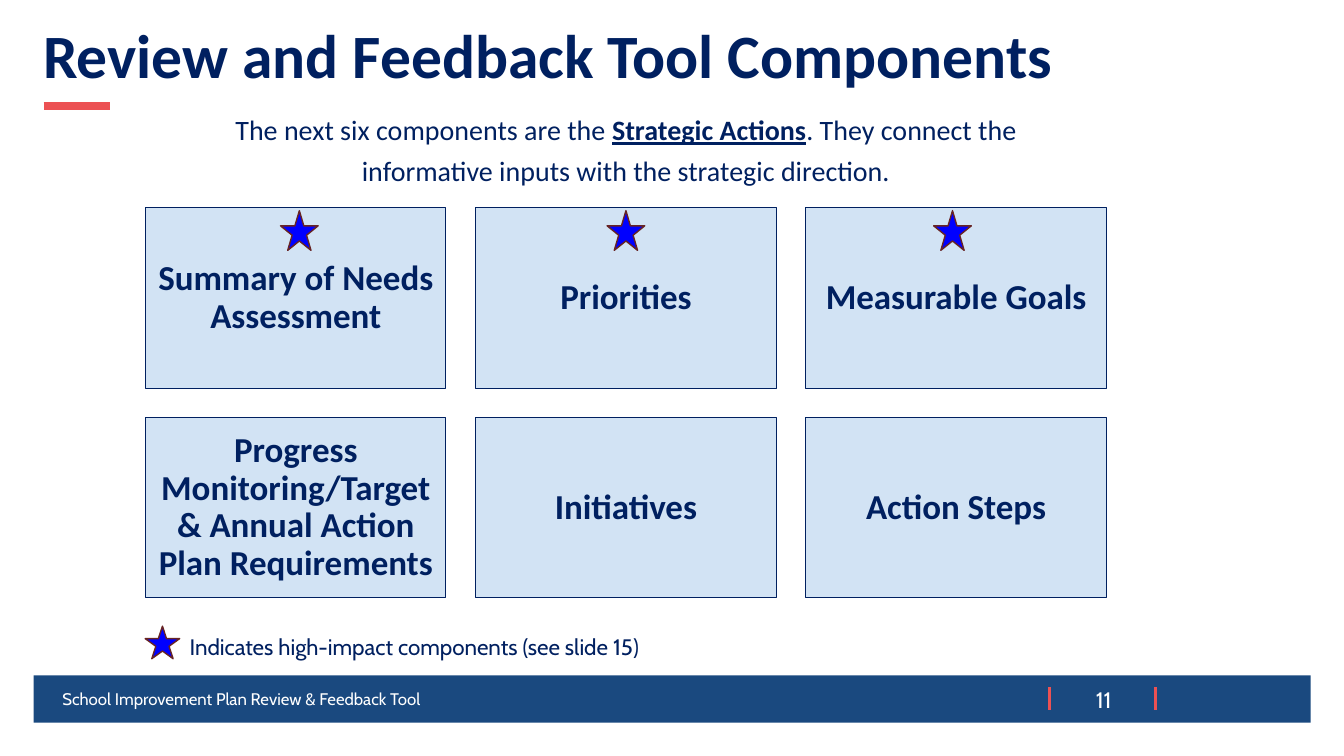
from dataclasses import dataclass

from lxml.etree import SubElement
from pptx import Presentation
from pptx.dml.color import RGBColor
from pptx.enum.shapes import MSO_CONNECTOR as Connector, MSO_SHAPE as Shape
from pptx.enum.text import MSO_ANCHOR as Anchor, PP_ALIGN as Align
from pptx.oxml.ns import qn
from pptx.util import Cm, Pt

COLORS = {
    "navy": "002060",
    "coral": "EC5153",
    "footer": "1A497F",
    "card": "D2E3F4",
    "star": "0000FF",
    "star_edge": "672424",
    "white": "FFFFFF",
}


@dataclass
class Area:
    """A rectangle in centimetres."""
    left: float
    top: float
    width: float
    height: float

    def lengths(self) -> list:
        return [Cm(n) for n in (self.left, self.top, self.width, self.height)]


@dataclass
class Style:
    font: str
    size: float
    color: str = "navy"
    bold: bool = False
    align: Align = Align.LEFT
    spacing: float = 1.0
    anchor: Anchor = Anchor.MIDDLE


@dataclass
class Span:
    text: str
    emphasis: bool = False


@dataclass
class Card:
    text: str
    high_impact: bool = False


@dataclass
class Rule:
    """A straight coral line, in centimetres, with its weight in points."""
    x1: float
    y1: float
    x2: float
    y2: float
    weight: float


TITLE = Style("Calibri", 44, bold=True, spacing=0.9)
INTRO = Style("Calibri", 20, align=Align.CENTER, spacing=1.23, anchor=Anchor.TOP)
CARD = Style("Calibri", 25, bold=True, align=Align.CENTER, spacing=0.9)
LEGEND = Style("Cabin", 16, spacing=1.23, anchor=Anchor.TOP)
FOOTER = Style("Cabin", 12, "white")
NUMBER = Style("Cabin", 16, "white", align=Align.CENTER)

CARDS = [
    Card("Summary of Needs Assessment", True),
    Card("Priorities", True),
    Card("Measurable Goals", True),
    Card("Progress Monitoring/Target & Annual Action Plan Requirements"),
    Card("Initiatives"),
    Card("Action Steps"),
]
COLUMNS = 3
CARD_PITCH_X, CARD_PITCH_Y = 8.32, 5.28
STAR_PITCH = 8.23

RULES = [
    Rule(1.1, 2.67, 2.78, 2.67, 6),
    Rule(29.13, 17.32, 29.13, 17.88, 2.25),
    Rule(26.44, 17.32, 26.44, 17.88, 2.25),
]


def rgb(name: str) -> RGBColor:
    return RGBColor.from_string(COLORS[name])


def write(box, spans: list[Span], style: Style) -> None:
    frame = box.text_frame
    frame.word_wrap = True
    frame.vertical_anchor = style.anchor
    para = frame.paragraphs[0]
    para.alignment = style.align
    para.line_spacing = style.spacing
    for span in spans:
        run = para.add_run()
        run.text = span.text
        run.font.name = style.font
        run.font.size = Pt(style.size)
        run.font.color.rgb = rgb(style.color)
        run.font.bold = style.bold or span.emphasis
        run.font.underline = span.emphasis


def add_text(page, area: Area, spans: list[Span], style: Style) -> None:
    write(page.shapes.add_textbox(*area.lengths()), spans, style)


def add_figure(page, kind: Shape, area: Area, fill: str,
               edge: str = "", weight: float = 0):
    """Add a filled preset shape, outlined only when an edge is named."""
    figure = page.shapes.add_shape(kind, *area.lengths())
    figure.shadow.inherit = False
    figure.fill.solid()
    figure.fill.fore_color.rgb = rgb(fill)
    if edge:
        figure.line.color.rgb = rgb(edge)
        figure.line.width = Pt(weight)
    else:
        figure.line.fill.background()
    return figure


def add_star(page, area: Area) -> None:
    add_figure(page, Shape.STAR_5_POINT, area, "star", "star_edge", 1)


def add_rule(page, rule: Rule) -> None:
    ends = [Cm(n) for n in (rule.x1, rule.y1, rule.x2, rule.y2)]
    line = page.shapes.add_connector(Connector.STRAIGHT, *ends)
    line.line.color.rgb = rgb("coral")
    line.line.width = Pt(rule.weight)
    SubElement(line._element.spPr, qn("a:effectLst"))


def add_card(page, card: Card, index: int) -> None:
    row, column = divmod(index, COLUMNS)
    area = Area(3.67 + column * CARD_PITCH_X, 5.24 + row * CARD_PITCH_Y, 7.57, 4.55)
    box = add_figure(page, Shape.RECTANGLE, area, "card", "navy", 0.75)
    frame = box.text_frame
    frame.margin_left = frame.margin_right = Cm(0.25)
    frame.margin_top = frame.margin_bottom = Cm(0.25)
    write(box, [Span(card.text)], CARD)
    if card.high_impact:
        add_star(page, Area(7.07 + column * STAR_PITCH, 5.31, 0.95, 1))


def main() -> None:
    deck = Presentation()
    deck.slide_width, deck.slide_height = Cm(33.87), Cm(19.05)
    page = deck.slides.add_slide(deck.slide_layouts[6])

    add_figure(page, Shape.RECTANGLE, Area(0.85, 17.02, 32.18, 1.19), "footer")
    for rule in RULES:
        add_rule(page, rule)

    add_text(page, Area(0.84, 0.5, 32.18, 1.95),
             [Span("Review and Feedback Tool Components")], TITLE)
    add_text(page, Area(4.1, 2.52, 23.35, 1.4), [
        Span("The next six components are the "),
        Span("Strategic Actions", emphasis=True),
        Span(". They connect the informative inputs with the strategic direction."),
    ], INTRO)

    for index, card in enumerate(CARDS):
        add_card(page, card, index)

    add_star(page, Area(3.66, 15.78, 0.87, 0.82))
    add_text(page, Area(4.53, 15.67, 13.1, 1.02),
             [Span("Indicates high-impact components (see slide 15)")], LEGEND)
    add_text(page, Area(1.32, 17.1, 21.5, 1.02),
             [Span("School Improvement Plan Review & Feedback Tool")], FOOTER)
    add_text(page, Area(27, 17.15, 1.63, 0.94), [Span("11")], NUMBER)

    deck.save("out.pptx")


if __name__ == "__main__":
    main()
